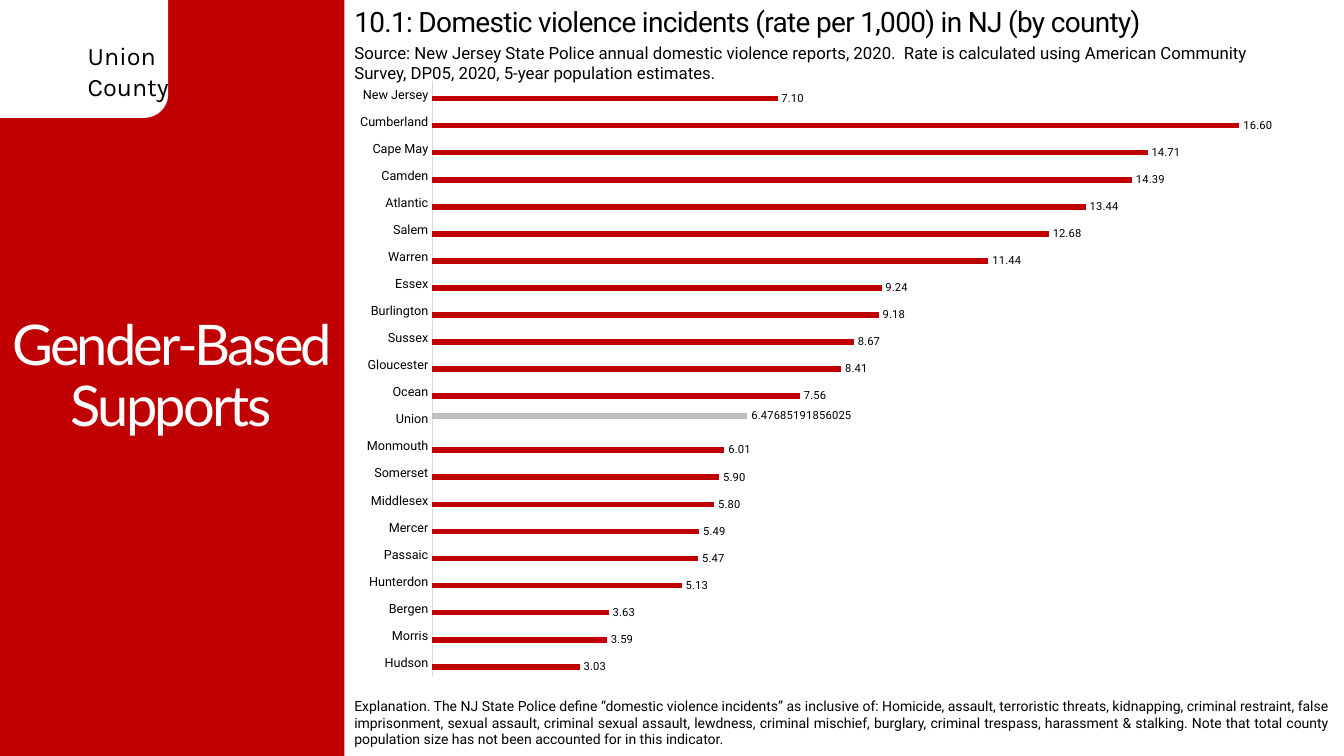
from copy import deepcopy
from dataclasses import dataclass

from pptx import Presentation
from pptx.chart.data import CategoryChartData
from pptx.dml.color import RGBColor
from pptx.enum.chart import XL_CHART_TYPE as ChartType, XL_LABEL_POSITION as LabelPosition
from pptx.enum.chart import XL_TICK_LABEL_POSITION as TickLabels, XL_TICK_MARK as TickMark
from pptx.enum.shapes import MSO_SHAPE as Shape
from pptx.enum.text import MSO_ANCHOR as Anchor, MSO_AUTO_SIZE as AutoSize, PP_ALIGN as Align
from pptx.oxml import parse_xml
from pptx.oxml.ns import nsdecls, qn
from pptx.util import Cm, Pt


@dataclass(frozen=True)
class Theme:
    red: str = "C00000"
    gray: str = "BFBFBF"
    rule: str = "D9D9D9"
    black: str = "000000"
    white: str = "FFFFFF"
    body: str = "Roboto"
    display: str = "Lato"
    tag: str = "Karla"
    chart: str = "Calibri"
    title_size: float = 40
    heading_size: float = 20
    tag_size: float = 18
    source_size: float = 12
    note_size: float = 10
    axis_size: float = 9
    label_size: float = 8


THEME = Theme()

COUNTY_RATES = {
    "Hudson": 3.03, "Morris": 3.59, "Bergen": 3.63, "Hunterdon": 5.13,
    "Passaic": 5.47, "Mercer": 5.49, "Middlesex": 5.8, "Somerset": 5.9,
    "Monmouth": 6.01, "Union": 6.48, "Ocean": 7.56,
    "Gloucester": 8.41, "Sussex": 8.67, "Burlington": 9.18, "Essex": 9.24,
    "Warren": 11.44, "Salem": 12.68, "Atlantic": 13.44, "Camden": 14.39,
    "Cape May": 14.71, "Cumberland": 16.6, "New Jersey": 7.1,
}
HIGHLIGHT = "Union"
HIGHLIGHT_LABEL = "6.47685191856025"
RATE_LIMIT = 18
PLOT_AREA = {"x": 0.089, "y": 0, "w": 0.887, "h": 0.911}


def style_font(font, size, name=THEME.body, color=THEME.black):
    font.size, font.name = Pt(size), name
    font.color.rgb = RGBColor.from_string(color)


def write_text(frame, text, *, size, name=THEME.body, color=THEME.black, align=Align.LEFT,
               anchor=Anchor.TOP, leading=None, tracking=0):
    """Fill a text frame, one paragraph per line of text."""
    frame.word_wrap = True
    frame.auto_size = AutoSize.NONE
    frame.vertical_anchor = anchor
    for index, line in enumerate(text.split("\n")):
        para = frame.add_paragraph() if index else frame.paragraphs[0]
        para.alignment = align
        if leading:
            para.line_spacing = leading
        span = para.add_run()
        span.text = line
        style_font(span.font, size, name, color)
        if tracking:
            span._r.get_or_add_rPr().set("spc", str(round(tracking * 100)))


def move_to_second_axes(chart):
    """Put the last series on its own hidden pair of axes."""
    plot_area = chart._chartSpace.find(".//" + qn("c:plotArea"))
    first = plot_area.find(qn("c:barChart"))
    second = deepcopy(first)
    first.remove(first.findall(qn("c:ser"))[-1])
    second.remove(second.find(qn("c:ser")))
    first.addnext(second)
    axes = [plot_area.find(qn(tag)) for tag in ("c:catAx", "c:valAx")]
    new_ids = {axis.find(qn("c:axId")).get("val"): str(5001 + index)
               for index, axis in enumerate(axes)}
    copies = [deepcopy(axis) for axis in axes]
    for axis in copies:
        axes[-1].addnext(axis)
        axis.find(qn("c:delete")).set("val", "1")
    copies[1].find(qn("c:crosses")).set("val", "max")
    for part in [second, *copies]:
        for tag in ("c:axId", "c:crossAx"):
            for reference in part.findall(qn(tag)):
                reference.set("val", new_ids[reference.get("val")])


def place_plot_area(chart, area):
    """Fix the inner plot area as fractions of the chart."""
    plot_area = chart._chartSpace.find(".//" + qn("c:plotArea"))
    for layout in plot_area.findall(qn("c:layout")):
        plot_area.remove(layout)
    modes = "".join(f'<c:{key}Mode val="edge"/>' for key in "xy")
    sizes = "".join(f'<c:{key} val="{value}"/>' for key, value in area.items())
    plot_area.insert(0, parse_xml(
        f'<c:layout {nsdecls("c")}><c:manualLayout><c:layoutTarget val="inner"/>'
        f"{modes}{sizes}</c:manualLayout></c:layout>"))


class PageBuilder:
    def __init__(self, deck, theme):
        self.theme = theme
        self.page = deck.slides.add_slide(deck.slide_layouts[5])

    def panel(self, kind, left, top, width, height, color):
        panel = self.page.shapes.add_shape(kind, Cm(left), Cm(top), Cm(width), Cm(height))
        panel.shadow.inherit = False
        panel.fill.solid()
        panel.fill.fore_color.rgb = RGBColor.from_string(color)
        panel.line.fill.background()

    def title(self, left, top, width, height, text, **style):
        title = self.page.shapes.title
        title.left, title.top, title.width, title.height = map(Cm, (left, top, width, height))
        write_text(title.text_frame, text, **style)
        # Bring the title in front of the panels
        self.page.shapes._spTree.append(title._element)

    def text(self, left, top, width, height, text, **style):
        box = self.page.shapes.add_textbox(Cm(left), Cm(top), Cm(width), Cm(height))
        write_text(box.text_frame, text, **style)

    def rate_chart(self, left, top, width, height, rates, highlight, highlight_label):
        theme = self.theme
        data = CategoryChartData(number_format="General")
        data.categories = list(rates)
        data.add_series("Series 1", [None if county == highlight else rate
                                     for county, rate in rates.items()])
        data.add_series("Series 2", [rate if county == highlight else None
                                     for county, rate in rates.items()])
        chart = self.page.shapes.add_chart(ChartType.BAR_CLUSTERED, Cm(left), Cm(top),
                                           Cm(width), Cm(height), data).chart
        chart.has_legend = chart.has_title = False
        style_font(chart.font, theme.note_size, theme.chart)

        # Bars and their values
        plot = chart.plots[0]
        plot.gap_width, plot.overlap = 250, -26
        plot.vary_by_categories = False
        for series, color in zip(plot.series, (theme.red, theme.gray)):
            series.format.fill.solid()
            series.format.fill.fore_color.rgb = RGBColor.from_string(color)
            labels = series.data_labels
            labels.show_value = True
            labels.position = LabelPosition.OUTSIDE_END
            labels.number_format, labels.number_format_is_linked = "0.00", False
            style_font(labels.font, theme.label_size)

        # Unrounded label of the highlighted county
        label = plot.series[1].points[list(rates).index(highlight)].data_label
        span = label.text_frame.paragraphs[0].add_run()
        span.text = highlight_label
        style_font(span.font, theme.label_size)
        label.position = LabelPosition.OUTSIDE_END

        # Axes
        counties, scale = chart.category_axis, chart.value_axis
        counties.major_tick_mark = counties.minor_tick_mark = TickMark.NONE
        counties.tick_label_position = TickLabels.NEXT_TO_AXIS
        counties.format.line.width = Pt(0.75)
        counties.format.line.color.rgb = RGBColor.from_string(theme.rule)
        style_font(counties.tick_labels.font, theme.axis_size)
        scale.minimum_scale, scale.maximum_scale = 0, RATE_LIMIT
        scale.has_major_gridlines = scale.visible = False
        scale.tick_labels.number_format = "0.00"
        scale.tick_labels.number_format_is_linked = False
        move_to_second_axes(chart)
        place_plot_area(chart, PLOT_AREA)


def main():
    deck = Presentation()
    deck.slide_width, deck.slide_height = Cm(33.87), Cm(19.05)
    builder = PageBuilder(deck, THEME)
    content_left = 8.68

    # Side panel with county tag and title
    builder.panel(Shape.RECTANGLE, 0, 0, content_left, 19.05, THEME.red)
    builder.panel(Shape.ROUNDED_RECTANGLE, -0.84, -0.64, 5.08, 3.61, THEME.white)
    builder.text(1.96, 0.9, 2.54, 1.8, "Union\nCounty", size=THEME.tag_size, name=THEME.tag)
    builder.title(-0.67, 1.9, 9.96, 15.24, "Gender-Based Supports", size=THEME.title_size,
                  name=THEME.display, color=THEME.white, align=Align.CENTER,
                  anchor=Anchor.MIDDLE, leading=0.9, tracking=-2)

    # Heading, source and explanation
    builder.text(content_left, 0, 25.04, 1.12,
                 "10.1: Domestic violence incidents (rate per 1,000) in NJ (by county)",
                 size=THEME.heading_size, tracking=-0.5)
    builder.text(content_left, 0.94, 23.34, 1.27,
                 "Source: New Jersey State Police annual domestic violence reports, 2020.  Rate is "
                 "calculated using American Community Survey, DP05, 2020, 5-year population "
                 "estimates.", size=THEME.source_size)
    builder.text(content_left, 17.57, 25.04, 1.27,
                 "Explanation. The NJ State Police define “domestic violence incidents” as "
                 "inclusive of: Homicide, assault, terroristic threats, kidnapping, criminal "
                 "restraint, false imprisonment, sexual assault, criminal sexual assault, "
                 "lewdness, criminal mischief, burglary, criminal trespass, harassment & "
                 "stalking. Note that total county population size has not been accounted for "
                 "in this indicator.",
                 size=THEME.note_size, align=Align.JUSTIFY, anchor=Anchor.MIDDLE)

    # Rates by county
    builder.rate_chart(content_left, 2.04, 24.87, 16.48, COUNTY_RATES, HIGHLIGHT,
                       HIGHLIGHT_LABEL)
    deck.save("out.pptx")


if __name__ == "__main__":
    main()
